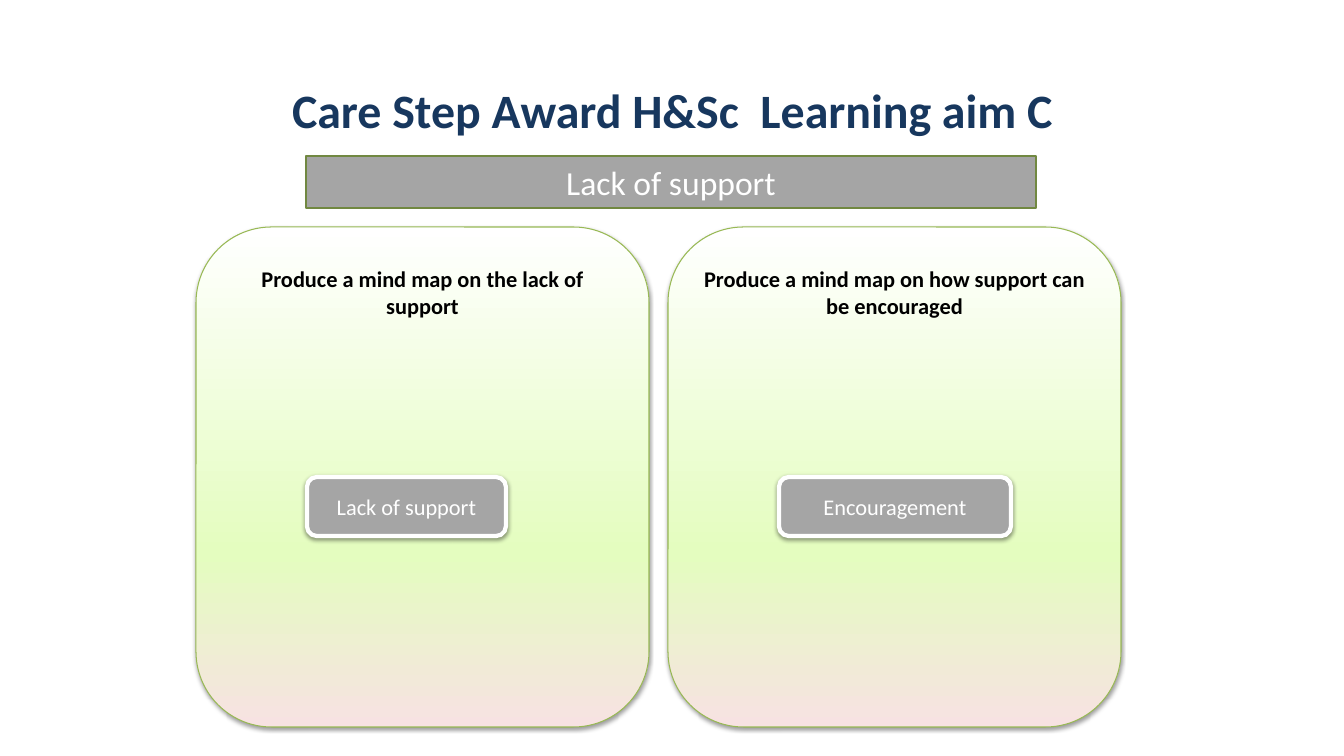
from dataclasses import dataclass

from lxml.etree import SubElement
from pptx import Presentation
from pptx.dml.color import RGBColor
from pptx.enum.shapes import MSO_SHAPE
from pptx.enum.text import MSO_ANCHOR, MSO_AUTO_SIZE, PP_ALIGN
from pptx.oxml.ns import qn
from pptx.util import Emu, Pt

EMU_PER_PX = 914400 / 100.8


@dataclass(frozen=True)
class Theme:
    font: str = "Calibri"
    navy: str = "17375E"
    grey: str = "A5A5A5"
    banner_edge: str = "718841"
    panel_edge: str = "98B955"
    white: str = "FFFFFF"
    black: str = "000000"
    panel_stops: tuple = ((0, "F7E2E2"), (35, "E4FDBF"), (100, "FFFFFF"))
    title_size: float = 34.2
    banner_size: int = 24
    body_size: int = 16


THEME = Theme()


def px(length):
    return Emu(round(length * EMU_PER_PX))


def write(frame, words, size, colour, bold=False, anchor=MSO_ANCHOR.MIDDLE):
    frame.word_wrap = True
    frame.auto_size = MSO_AUTO_SIZE.NONE
    frame.vertical_anchor = anchor
    paragraph = frame.paragraphs[0]
    paragraph.alignment = PP_ALIGN.CENTER
    run = paragraph.add_run()
    run.text = words
    run.font.name = THEME.font
    run.font.size = Pt(size)
    run.font.bold = bold
    run.font.color.rgb = RGBColor.from_string(colour)
    return paragraph


def add_block(slide, kind, box, edge, edge_width, inset_top=5):
    block = slide.shapes.add_shape(kind, *map(px, box))
    block.shadow.inherit = False
    block.line.color.rgb = RGBColor.from_string(edge)
    block.line.width = Pt(edge_width)
    frame = block.text_frame
    frame.margin_left = frame.margin_right = frame.margin_bottom = px(5)
    frame.margin_top = px(inset_top)
    return block


def fill_grey(block):
    block.fill.solid()
    block.fill.fore_color.rgb = RGBColor.from_string(THEME.grey)


def fill_gradient(block):
    block.fill.gradient()
    block.fill.gradient_angle = 90
    stops = block._element.spPr.find(".//" + qn("a:gsLst"))
    for stop in list(stops):
        stops.remove(stop)
    for percent, colour in THEME.panel_stops:
        stop = SubElement(stops, qn("a:gs"), pos=str(percent * 1000))
        SubElement(stop, qn("a:srgbClr"), val=colour)


def drop_shadow(block):
    effects = block._element.spPr.find(qn("a:effectLst"))
    shadow = SubElement(effects, qn("a:outerShdw"), blurRad=str(Pt(3)),
                        dist=str(Pt(1.6)), dir="5400000", rotWithShape="0")
    colour = SubElement(shadow, qn("a:srgbClr"), val=THEME.black)
    SubElement(colour, qn("a:alpha"), val="38000")


def place_title(slide, box, words):
    title = slide.shapes.title
    title.left, title.top, title.width, title.height = map(px, box)
    heading = write(title.text_frame, words, THEME.title_size, THEME.navy, bold=True)
    heading.line_spacing = 0.9


def add_banner(slide, box, words):
    banner = add_block(slide, MSO_SHAPE.RECTANGLE, box, THEME.banner_edge, 2)
    fill_grey(banner)
    write(banner.text_frame, words, THEME.banner_size, THEME.white)


def add_mind_map(slide, box, task, topic, topic_width):
    left, top, _, _ = box
    panel = add_block(slide, MSO_SHAPE.ROUNDED_RECTANGLE, box,
                      THEME.panel_edge, 0.75, inset_top=16)
    fill_gradient(panel)
    drop_shadow(panel)
    write(panel.text_frame, task, THEME.body_size, THEME.black,
          bold=True, anchor=MSO_ANCHOR.TOP)

    hub = add_block(slide, MSO_SHAPE.ROUNDED_RECTANGLE,
                    (left + 111, top + 250, topic_width, 59), THEME.white, 3)
    fill_grey(hub)
    drop_shadow(hub)
    write(hub.text_frame, topic, THEME.body_size, THEME.white)


def main():
    deck = Presentation()
    deck.slide_width, deck.slide_height = px(1344), px(756)
    slide = deck.slides.add_slide(deck.slide_layouts[5])

    place_title(slide, (93, 40, 1159, 146), "Care Step Award H&Sc  Learning aim C")
    add_banner(slide, (306, 156, 730, 52), "Lack of support")
    mind_maps = (
        ("Produce a mind map on the lack of support", "Lack of support", 199),
        ("Produce a mind map on how support can be encouraged", "Encouragement", 232),
    )
    for column, (task, topic, topic_width) in enumerate(mind_maps):
        add_mind_map(slide, (196 + column * 472, 227, 453, 500),
                     task, topic, topic_width)

    deck.save("out.pptx")


if __name__ == "__main__":
    main()
